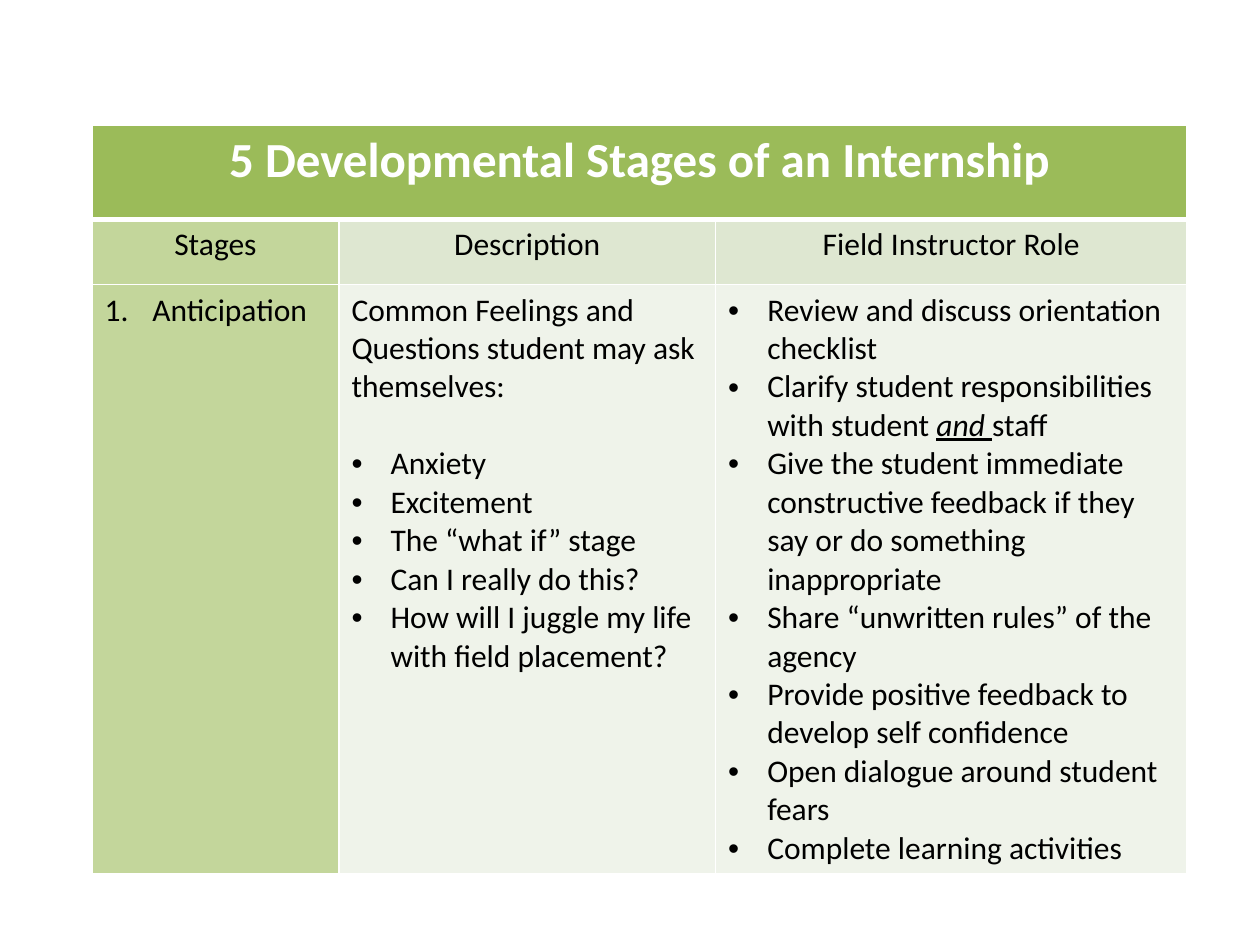
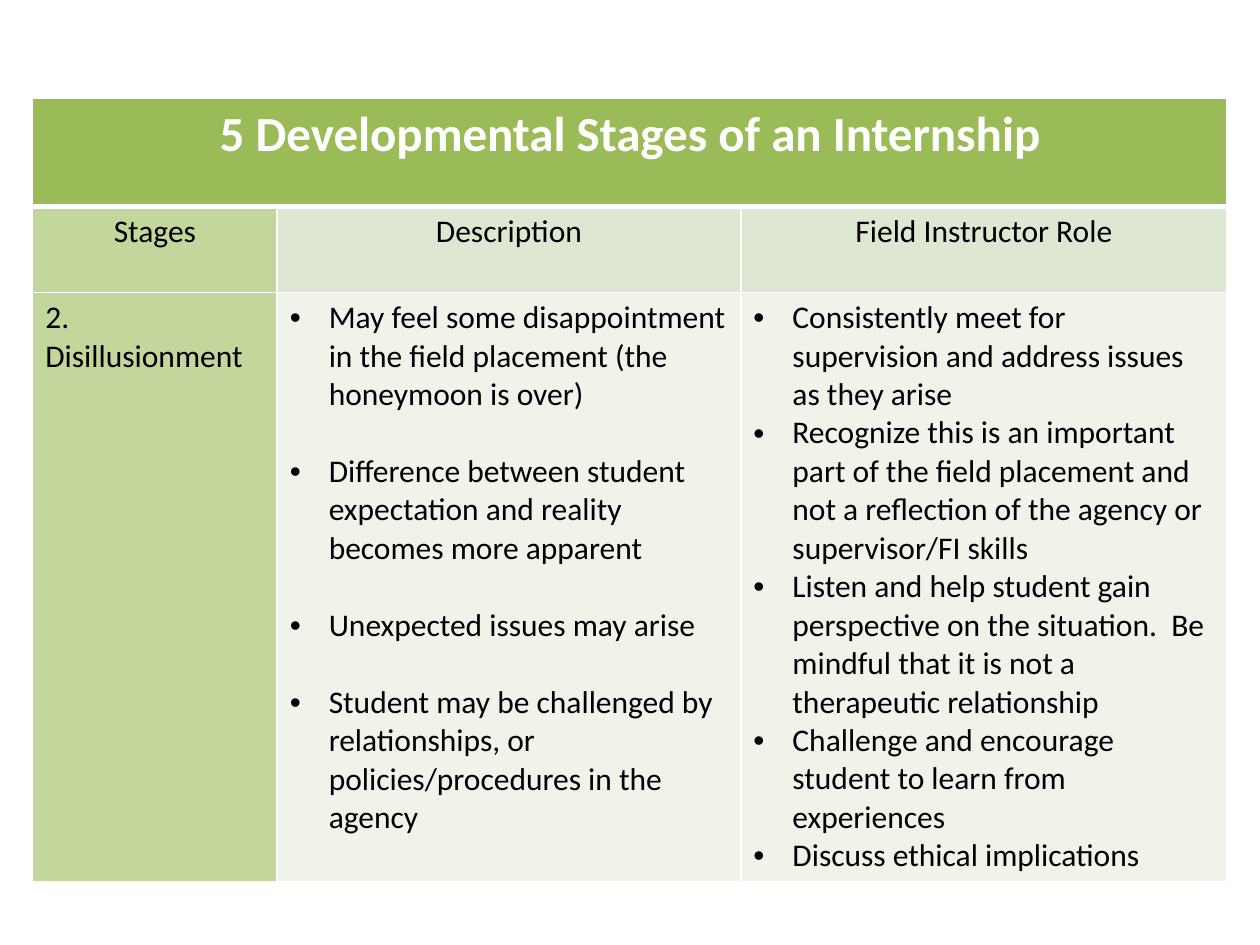
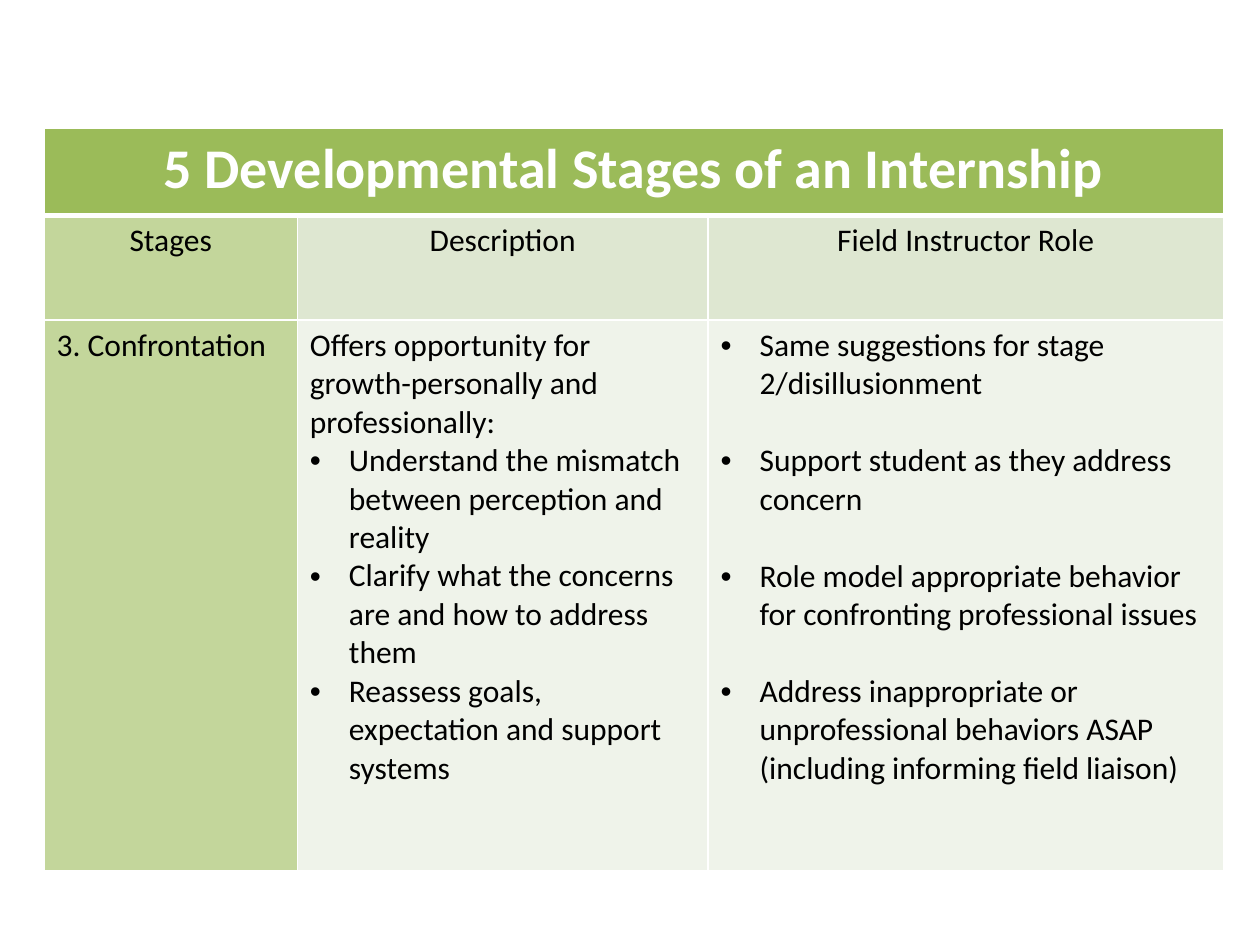
from dataclasses import dataclass

from lxml import etree
from pptx import Presentation
from pptx import util as u
from pptx.dml.color import RGBColor
from pptx.enum import text
from pptx.oxml import ns

TITLE = "5 Developmental Stages of an Internship"
HEADINGS = ["Stages", "Description", "Field Instructor Role"]
BLANK_LAYOUT = 6


@dataclass(frozen=True)
class Theme:
    font: str = "Calibri"
    bullet_font: str = "Arial"
    body_size: float = 18
    line_gap: float = 22
    white: str = "FFFFFF"
    black: str = "000000"
    title_fill: str = "9BBB59"
    stage_fill: str = "C3D69B"
    heading_fill: str = "DEE7D1"
    body_fill: str = "EFF3EA"
    rule: float = 1
    title_rule: float = 3
    bullet_indent: float = 0.31
    number_indent: float = 0.38


THEME = Theme()


@dataclass(frozen=True)
class Item:
    """A paragraph; asterisks enclose emphasised words."""
    words: str
    marker: str = ""
    gap: float = 0


def bullets(*lines, gap=0, first_gap=0):
    return [Item(line, "•", gap if index else first_gap)
            for index, line in enumerate(lines)]


def write_text(paragraph, words, size=THEME.body_size, color=THEME.black,
               bold=False, align=text.PP_ALIGN.LEFT, gap=0):
    paragraph.alignment = align
    if gap:
        paragraph.space_before = u.Pt(gap)
    for index, part in enumerate(words.split("*")):
        run = paragraph.add_run()
        run.text = part
        font = run.font
        font.name, font.size, font.bold = THEME.font, u.Pt(size), bold
        font.color.rgb = RGBColor.from_string(color)
        if index % 2:
            font.italic = font.underline = True


def add_marker(paragraph, marker):
    """Give the paragraph a hanging bullet, or a number for the marker "1."."""
    numbered = marker == "1."
    indent = u.Inches(THEME.number_indent if numbered else THEME.bullet_indent)
    properties = paragraph._p.get_or_add_pPr()
    properties.set("marL", str(indent))
    properties.set("indent", str(-indent))
    if numbered:
        etree.SubElement(properties, ns.qn("a:buAutoNum"), type="arabicPeriod")
    else:
        etree.SubElement(properties, ns.qn("a:buFont"), typeface=THEME.bullet_font)
        etree.SubElement(properties, ns.qn("a:buChar"), char=marker)


class StageDeck:
    def __init__(self, theme):
        self.theme = theme
        self.deck = Presentation()
        self.deck.slide_width, self.deck.slide_height = u.Inches(10), u.Inches(7.5)
        self.slide = None

    def add_slide(self):
        self.slide = self.deck.slides.add_slide(self.deck.slide_layouts[BLANK_LAYOUT])

    def style_cell(self, cell, fill, top, bottom):
        properties = cell._tc.get_or_add_tcPr()
        rule = self.theme.rule
        for side, width in zip("LRTB", (rule, rule, top, bottom)):
            line = etree.SubElement(properties, ns.qn(f"a:ln{side}"), w=str(u.Pt(width)))
            solid = etree.SubElement(line, ns.qn("a:solidFill"))
            etree.SubElement(solid, ns.qn("a:srgbClr"), val=self.theme.white)
        cell.fill.solid()
        cell.fill.fore_color.rgb = RGBColor.from_string(fill)

    def fill_cell(self, cell, items):
        frame = cell.text_frame
        for index, item in enumerate(items):
            paragraph = frame.add_paragraph() if index else frame.paragraphs[0]
            if item.marker:
                add_marker(paragraph, item.marker)
            write_text(paragraph, item.words, gap=item.gap)

    def add_stage_table(self, left, top, columns, rows, contents, title_size=28):
        theme = self.theme
        table = self.slide.shapes.add_table(
            len(rows), len(columns), u.Inches(left), u.Inches(top),
            u.Inches(sum(columns)), u.Inches(sum(rows))).table
        table.first_row = table.horz_banding = False
        for row, height in zip(table.rows, rows):
            row.height = u.Inches(height)

        for index, width in enumerate(columns):
            table.columns[index].width = u.Inches(width)
            title, heading, body = (table.cell(row, index) for row in range(3))
            first = index == 0
            self.style_cell(title, theme.title_fill, theme.rule, theme.title_rule)
            self.style_cell(heading, theme.stage_fill if first else theme.heading_fill,
                            theme.title_rule, theme.rule)
            self.style_cell(body, theme.stage_fill if first else theme.body_fill,
                            theme.rule, theme.rule)
            write_text(heading.text_frame.paragraphs[0], HEADINGS[index],
                       align=text.PP_ALIGN.CENTER)
            self.fill_cell(body, contents[index])

        banner = table.cell(0, 0)
        banner.merge(table.cell(0, len(columns) - 1))
        write_text(banner.text_frame.paragraphs[0], TITLE, size=title_size,
                   color=theme.white, bold=True, align=text.PP_ALIGN.CENTER)


def main():
    stages = StageDeck(THEME)

    stages.add_slide()
    stages.add_stage_table(0.73, 0.99, [1.96, 2.99, 3.74], [0.75, 0.52, 4.67], [
        [Item("Anticipation", "1.")],
        [Item("Common Feelings and Questions student may ask themselves:"),
         *bullets("Anxiety", "Excitement", "The “what if” stage",
                  "Can I really do this?",
                  "How will I juggle my life with field placement?",
                  first_gap=THEME.line_gap)],
        bullets("Review and discuss orientation checklist",
                "Clarify student responsibilities with student *and *staff",
                "Give the student immediate constructive feedback if they say "
                "or do something inappropriate",
                "Share “unwritten rules” of the agency",
                "Provide positive feedback to develop self confidence",
                "Open dialogue around student fears",
                "Complete learning activities"),
    ])

    stages.add_slide()
    stages.add_stage_table(0.26, 0.78, [1.94, 3.68, 3.86], [0.86, 0.68, 4.67], [
        [Item("2. Disillusionment")],
        bullets("May feel some disappointment in the field placement "
                "(the honeymoon is over)",
                "Difference between student expectation and reality becomes "
                "more apparent",
                "Unexpected issues may arise",
                "Student may be challenged by relationships, or "
                "policies/procedures in the agency",
                gap=THEME.line_gap),
        bullets("Consistently meet for supervision and address issues as they arise",
                "Recognize this is an important part of the field placement and "
                "not a reflection of the agency or supervisor/FI skills",
                "Listen and help student gain perspective on the situation.  "
                "Be mindful that it is not a therapeutic relationship",
                "Challenge and encourage student to learn from experiences",
                "Discuss ethical implications"),
    ])

    stages.add_slide()
    stages.add_stage_table(0.35, 1.02, [2.01, 3.26, 4.09], [0.69, 0.83, 4.37], [
        [Item("3. Confrontation")],
        [Item("Offers opportunity for growth-personally and professionally:"),
         *bullets("Understand the mismatch between perception and reality",
                  "Clarify what the concerns are and how to address them",
                  "Reassess goals, expectation and support systems")],
        bullets("Same suggestions for stage 2/disillusionment",
                "Support student as they address concern",
                "Role model appropriate behavior for confronting professional issues",
                "Address inappropriate or unprofessional behaviors ASAP "
                "(including informing field liaison)",
                gap=THEME.line_gap),
    ], title_size=32)

    stages.deck.save("out.pptx")


if __name__ == "__main__":
    main()
